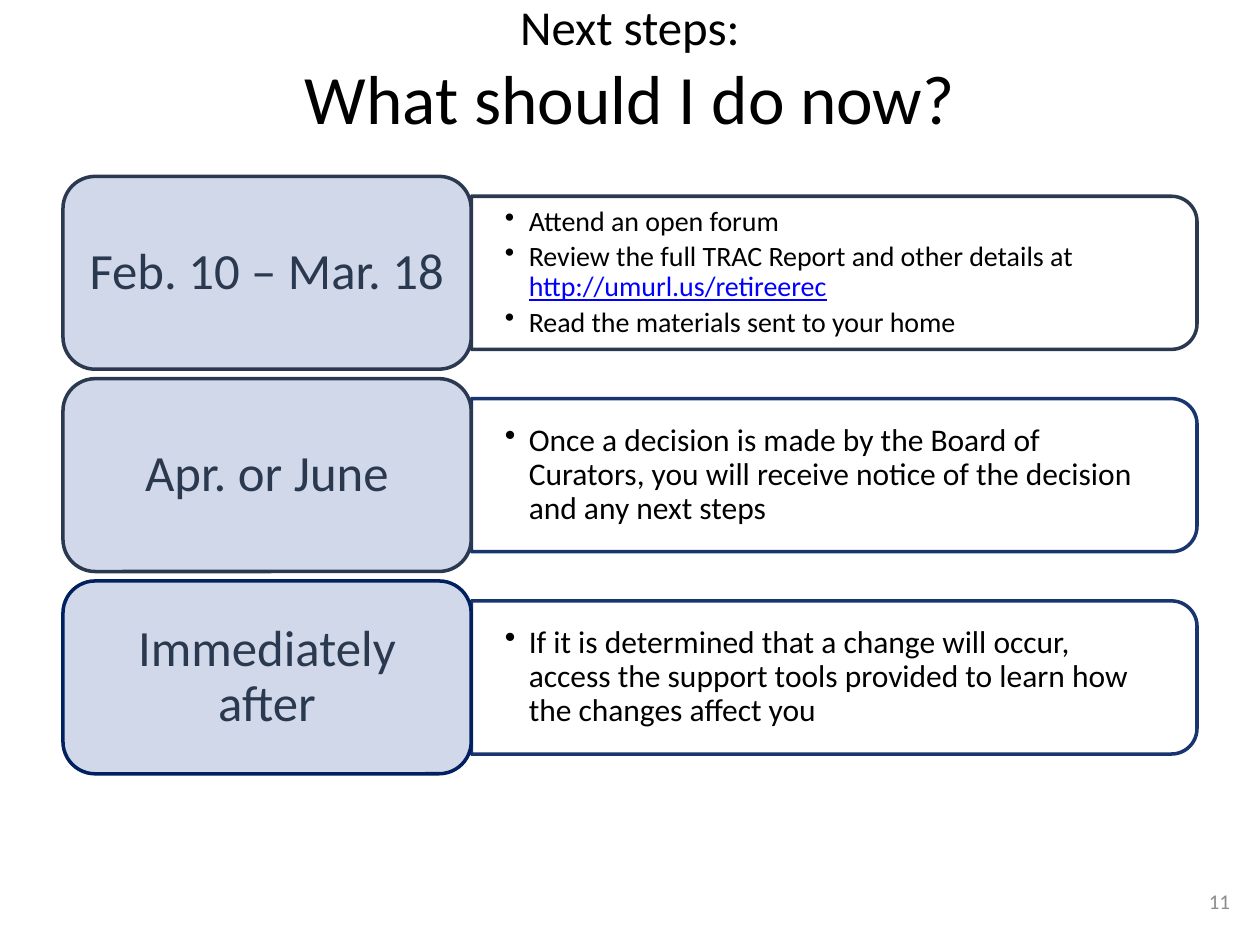
from dataclasses import dataclass
from typing import Optional

from lxml.etree import SubElement
from pptx import Presentation
from pptx.dml.color import RGBColor
from pptx.enum.shapes import MSO_SHAPE as SHAPE
from pptx.enum.text import MSO_ANCHOR as ANCHOR, MSO_AUTO_SIZE as AUTO, PP_ALIGN as ALIGN
from pptx.oxml.ns import qn
from pptx.util import Pt

FONT = "Calibri"
BLACK, SLATE, NAVY, PALE = "000000", "2A394F", "002060", "D0D8E9"
LINK, GREY = "0000FF", "8C8C8C"

LEFT, TOP, PITCH = 36, 100.8, 115.6
LABEL_W, LABEL_H = 233.3, 110.2
PANEL_W, PANEL_H = 414.7, 87.5
PANEL_LEFT = LEFT + LABEL_W
TEXT_W, TEXT_H = 410.4, 79


@dataclass
class Span:
    text: str
    color: str = BLACK
    underline: Optional[bool] = None


@dataclass
class Step:
    label: str
    bullets: list[list[Span]]
    size: float = 18
    label_line: str = SLATE
    panel_line: str = NAVY
    panel_alpha: int = 90


STEPS = [
    Step("Feb. 10 – Mar. 18", [
        [Span("Attend an open forum")],
        [Span("Review the full TRAC Report and other details at "),
         Span("http://umurl.us/retireerec", LINK, True)],
        [Span("Read the materials sent to your home")],
    ], size=16, panel_line=SLATE, panel_alpha=100),
    Step("Apr. or June", [
        [Span("Once a decision is made by the Board of Curators, you will receive "
              "notice of the decision and any next steps")],
    ]),
    Step("Immediately after", [
        [Span("If it is determined that a change will occur, access the support tools "
              "provided to learn how the changes affect you")],
    ], label_line=NAVY),
]


def rgb(color: str) -> RGBColor:
    return RGBColor.from_string(color)


def add_run(p, text: str, size: float, color: str, underline: Optional[bool] = None) -> None:
    r = p.add_run()
    r.text = text
    r.font.name = FONT
    r.font.size = Pt(size)
    r.font.color.rgb = rgb(color)
    r.font.underline = underline


def set_frame(tf, inset_x: float, inset_y: float) -> None:
    tf.word_wrap = True
    tf.auto_size = AUTO.NONE
    tf.vertical_anchor = ANCHOR.MIDDLE
    tf.margin_left = tf.margin_right = Pt(inset_x)
    tf.margin_top = tf.margin_bottom = Pt(inset_y)


def set_line(sp, color: str, alpha: int = 100) -> None:
    sp.shadow.inherit = False
    sp.line.width = Pt(2)
    sp.line.color.rgb = rgb(color)
    if alpha < 100:
        clr = sp.line._get_or_add_ln().find(f".//{qn('a:srgbClr')}")
        SubElement(clr, qn("a:alpha"), val=str(alpha * 1000))


def set_bullet(p) -> None:
    pPr = p._p.get_or_add_pPr()
    pPr.set("marL", str(Pt(13.7)))
    pPr.set("indent", str(-Pt(13.7)))
    SubElement(pPr, qn("a:buChar"), char="•")


def add_title(s) -> None:
    sp = s.shapes.title
    sp.left, sp.top, sp.width, sp.height = Pt(36), Pt(-6.5), Pt(648), Pt(90)
    tf = sp.text_frame
    set_frame(tf, 7.2, 3.6)
    p = tf.paragraphs[0]
    p.alignment = ALIGN.CENTER
    add_run(p, "Next steps:", 27.9, BLACK)
    p.add_line_break()
    SubElement(p._p.find(qn("a:br")), qn("a:rPr"), sz="2790")
    add_run(p, "What should I do now?", 39.6, BLACK)


def add_panel(s, step: Step, middle: float) -> None:
    center = PANEL_LEFT + PANEL_W / 2
    sp = s.shapes.add_shape(SHAPE.ROUND_2_SAME_RECTANGLE,
                            Pt(center - PANEL_H / 2), Pt(middle - PANEL_W / 2),
                            Pt(PANEL_H), Pt(PANEL_W))
    sp.rotation = 90
    sp.fill.background()
    set_line(sp, step.panel_line, step.panel_alpha)

    box = s.shapes.add_textbox(Pt(PANEL_LEFT), Pt(middle - TEXT_H / 2), Pt(TEXT_W), Pt(TEXT_H))
    tf = box.text_frame
    set_frame(tf, 19.2, 9.9)
    for i, spans in enumerate(step.bullets):
        p = tf.add_paragraph() if i else tf.paragraphs[0]
        p.line_spacing = 0.9
        p.space_after = Pt(2.8)
        set_bullet(p)
        for span in spans:
            add_run(p, span.text, step.size, span.color, span.underline)


def add_label(s, step: Step, top: float) -> None:
    sp = s.shapes.add_shape(SHAPE.ROUNDED_RECTANGLE, Pt(LEFT), Pt(top), Pt(LABEL_W), Pt(LABEL_H))
    sp.fill.solid()
    sp.fill.fore_color.rgb = rgb(PALE)
    set_line(sp, step.label_line)
    tf = sp.text_frame
    set_frame(tf, 8.7, 4.4)
    p = tf.paragraphs[0]
    p.alignment = ALIGN.CENTER
    p.line_spacing = 0.9
    add_run(p, step.label, 29, SLATE)


def add_page_number(s, number: str) -> None:
    box = s.shapes.add_textbox(Pt(542.2), Pt(500.4), Pt(167.8), Pt(28.8))
    tf = box.text_frame
    set_frame(tf, 7.2, 3.6)
    p = tf.paragraphs[0]
    p.alignment = ALIGN.RIGHT
    add_run(p, number, 12, GREY)


def main() -> None:
    prs = Presentation()
    prs.slide_width, prs.slide_height = Pt(720), Pt(540)
    s = prs.slides.add_slide(prs.slide_layouts[5])
    add_title(s)
    for i, step in enumerate(STEPS):
        top = TOP + i * PITCH
        add_panel(s, step, top + LABEL_H / 2)
        add_label(s, step, top)
    add_page_number(s, "11")
    prs.save("out.pptx")


if __name__ == "__main__":
    main()
